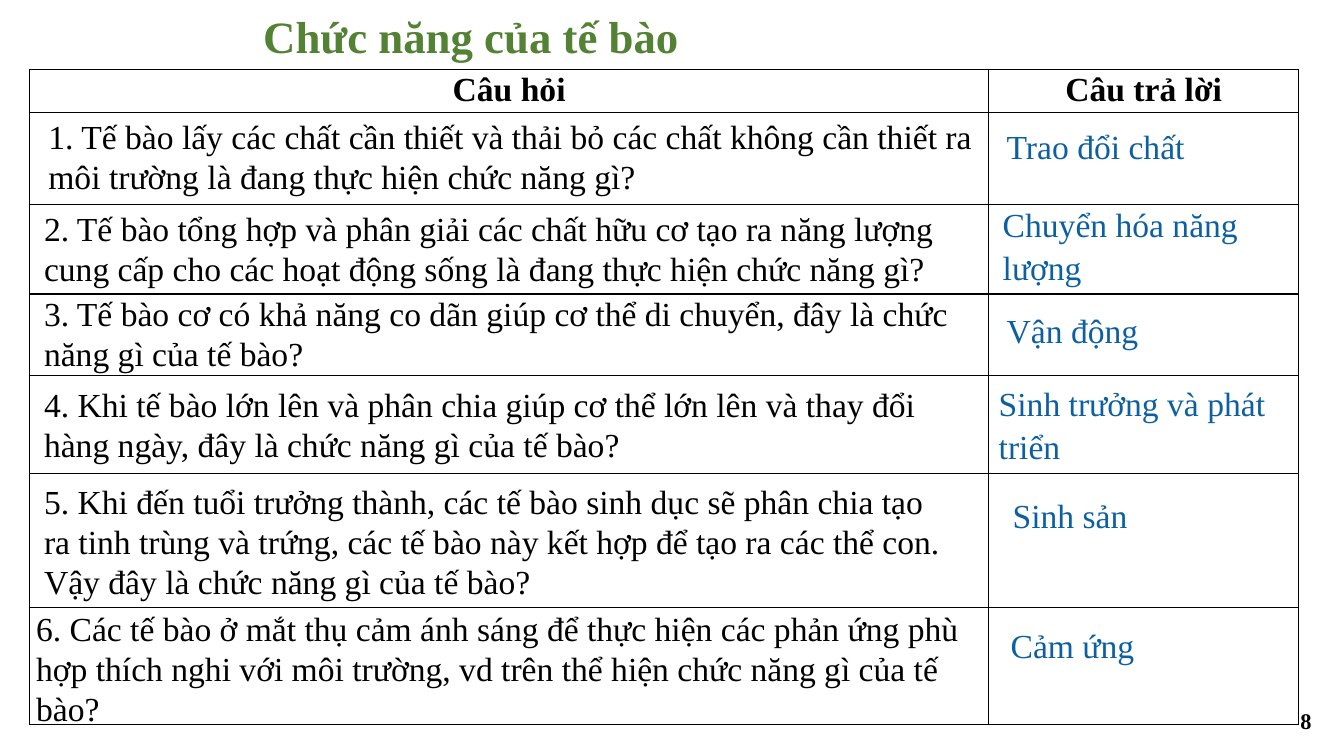
"""Builds the slide on cell functions: a question and answer table with a title."""
from lxml.etree import SubElement
from pptx import Presentation
from pptx.dml.color import RGBColor
from pptx.enum.text import MSO_ANCHOR, MSO_AUTO_SIZE, PP_ALIGN
from pptx.oxml.ns import qn
from pptx.util import Cm, Pt

COLORS = {"black": "000000", "white": "FFFFFF", "green": "548235", "blue": "0C60A1"}
FONT = "Times New Roman"
TITLE = ("Chức năng của tế bào", (6.38, 0.1, 14.78, 1.63))
NUMBER = ("8", (25.68, 17.65, 7.62, 1.02))
HEADERS = ["Câu hỏi", "Câu trả lời"]
TABLE_LEFT, TABLE_TOP = 0.74, 1.75
COLUMN_WIDTHS = [24.18, 7.8]
ROW_HEIGHTS = [1.09, 2.31, 2.26, 2.06, 2.46, 3.38, 2.95]
QUESTIONS = [
    ("1. Tế bào lấy các chất cần thiết và thải bỏ các chất không cần thiết ra "
     "môi trường là đang thực hiện chức năng gì?", (0.97, 2.79, 23.93, 2.31)),
    ("2. Tế bào tổng hợp và phân giải các chất hữu cơ tạo ra năng lượng "
     "cung cấp cho các hoạt động sống là đang thực hiện chức năng gì?",
     (0.86, 5.11, 24.18, 2.31)),
    ("3. Tế bào cơ có khả năng co dãn giúp cơ thể di chuyển, đây là chức "
     "năng gì của tế bào?", (0.86, 7.26, 24.05, 2.31)),
    ("4. Khi tế bào lớn lên và phân chia giúp cơ thể lớn lên và thay đổi "
     "hàng ngày, đây là chức năng gì của tế bào?", (0.86, 9.55, 24.05, 2.31)),
    ("5. Khi đến tuổi trưởng thành, các tế bào sinh dục sẽ phân chia tạo "
     "ra tinh trùng và trứng, các tế bào này kết hợp để tạo ra các thể con. "
     "Vậy đây là chức năng gì của tế bào?", (0.86, 11.99, 23.39, 3.33)),
    ("6. Các tế bào ở mắt thụ cảm ánh sáng để thực hiện các phản ứng phù "
     "hợp thích nghi với môi trường, vd trên thể hiện chức năng gì của tế bào?",
     (0.66, 15.19, 24.38, 4.11)),
]
ANSWERS = [
    ("Trao đổi chất", (25.12, 3.05, 7.62, 2.06), 1.0),
    ("Chuyển hóa năng lượng", (25.02, 4.95, 7.34, 2.46), 1.07),
    ("Vận động", (25.12, 7.62, 4.6, 1.35), 1.07),
    ("Sinh trưởng và phát triển", (24.92, 9.45, 7.44, 2.39), 1.07),
    ("Sinh sản", (25.27, 12.27, 3.43, 1.27), 1.07),
    ("Cảm ứng", (25.22, 15.54, 3.66, 1.27), 1.07),
]


def write(frame, text, color, size=24, bold=False, align=PP_ALIGN.LEFT, spacing=1.0):
    para = frame.paragraphs[0]
    para.alignment, para.line_spacing = align, spacing
    span = para.add_run()
    span.text = text
    formats = {"name": FONT, "size": Pt(size), "bold": bold}
    for name, value in formats.items():
        setattr(span.font, name, value)
    span.font.color.rgb = RGBColor.from_string(COLORS[color])


def add_text(page, text, place, color, anchor=MSO_ANCHOR.TOP, **formats):
    box = page.shapes.add_textbox(*map(Cm, place))
    box.text_frame.word_wrap = True
    box.text_frame.vertical_anchor = anchor
    write(box.text_frame, text, color, **formats)


def style_cell(cell):
    cell.fill.solid()
    cell.fill.fore_color.rgb = RGBColor.from_string(COLORS["white"])
    properties = cell._tc.get_or_add_tcPr()
    for position, side in enumerate(("lnL", "lnR", "lnT", "lnB")):
        line = SubElement(properties, qn(f"a:{side}"), w=str(Pt(1)))
        fill = SubElement(line, qn("a:solidFill"))
        SubElement(fill, qn("a:srgbClr"), val=COLORS["black"])
        properties.insert(position, line)


def add_grid(page):
    frame = page.shapes.add_table(
        len(ROW_HEIGHTS), len(COLUMN_WIDTHS), Cm(TABLE_LEFT), Cm(TABLE_TOP),
        Cm(sum(COLUMN_WIDTHS)), Cm(sum(ROW_HEIGHTS)))
    table = frame.table
    for column, width in zip(table.columns, COLUMN_WIDTHS):
        column.width = Cm(width)
    for row, height in zip(table.rows, ROW_HEIGHTS):
        row.height = Cm(height)
    for cell in table.iter_cells():
        style_cell(cell)
    margins = {"margin_left": 0.18, "margin_top": 0, "margin_right": 0.18, "margin_bottom": 0}
    for cell, header in zip(table.rows[0].cells, HEADERS):
        for name, value in margins.items():
            setattr(cell, name, Cm(value))
        write(cell.text_frame, header, "black", bold=True, align=PP_ALIGN.CENTER, spacing=1.07)


def add_title(page):
    text, place = TITLE
    title = page.shapes.title
    for name, value in zip(("left", "top", "width", "height"), place):
        setattr(title, name, Cm(value))
    formats = {"word_wrap": True, "vertical_anchor": MSO_ANCHOR.TOP,
               "auto_size": MSO_AUTO_SIZE.NONE}
    for name, value in formats.items():
        setattr(title.text_frame, name, value)
    write(title.text_frame, text, "green", size=32, bold=True)


def main():
    deck = Presentation()
    deck.slide_width, deck.slide_height = Cm(33.87), Cm(19.05)
    page = deck.slides.add_slide(deck.slide_layouts.get_by_name("Title Only"))
    add_title(page)
    add_text(page, *NUMBER, "black", anchor=MSO_ANCHOR.MIDDLE, size=16, bold=True,
             align=PP_ALIGN.RIGHT)
    add_grid(page)
    for text, place in QUESTIONS:
        add_text(page, text, place, "black")
    for text, place, spacing in ANSWERS:
        add_text(page, text, place, "blue", spacing=spacing)
    deck.save("out.pptx")


if __name__ == "__main__":
    main()
